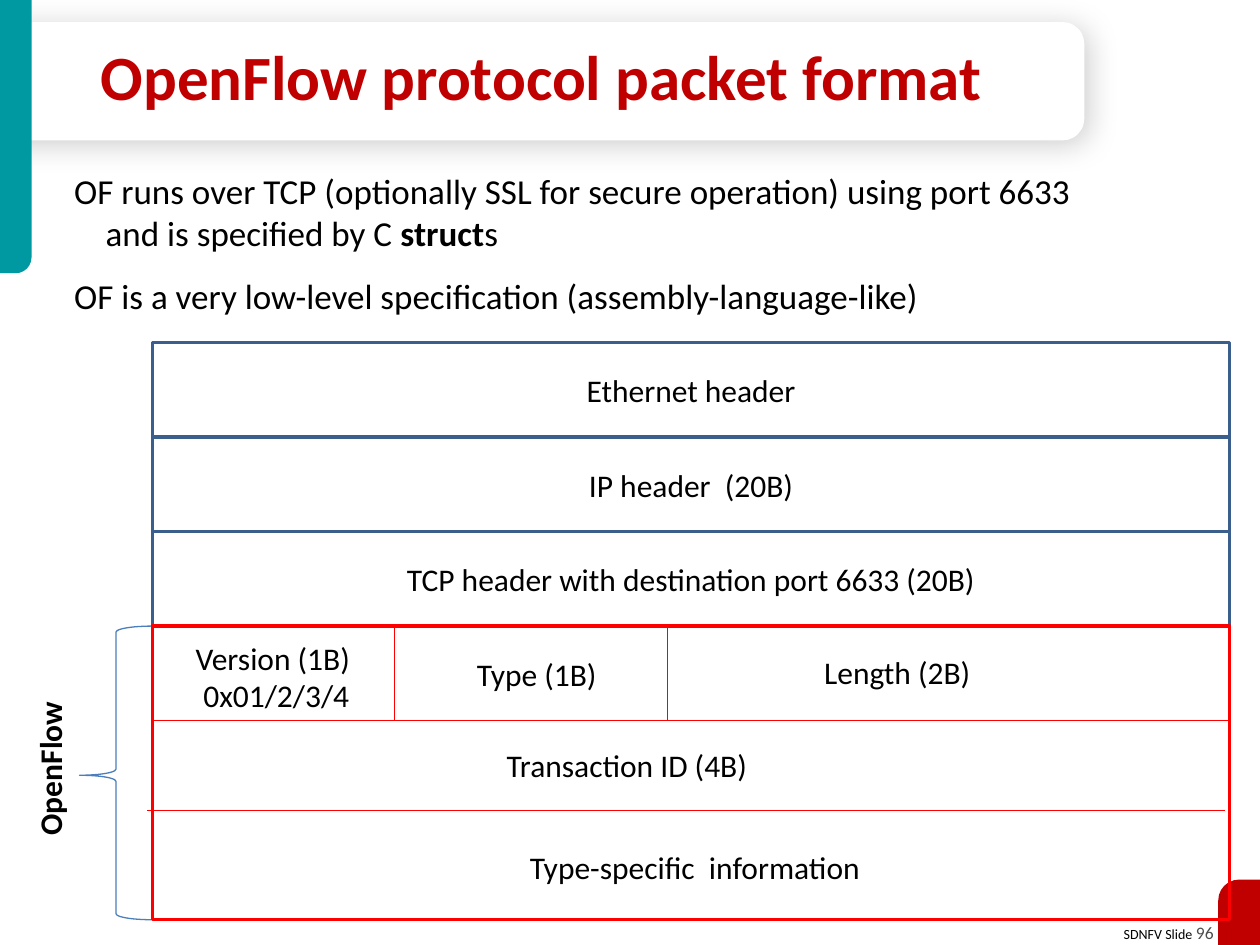
"""Build the slide on the OpenFlow protocol packet format."""
from lxml.etree import SubElement
from pptx import Presentation
from pptx.dml.color import RGBColor
from pptx.enum.shapes import MSO_CONNECTOR, MSO_SHAPE as SHAPE
from pptx.enum.text import MSO_ANCHOR as ANCHOR, PP_ALIGN as ALIGN
from pptx.oxml.ns import qn
from pptx.util import Pt

BLACK, GREY, RED, TEAL = "000000", "4D4D4D", "C00000", "0098A1"
WHITE, NAVY, BLUE, BRIGHT_RED = "FFFFFF", "3A5F8C", "4B7EBC", "FF0000"

TITLE = "OpenFlow protocol packet format"
INTRO = [
    (-18, 0, [("OF runs over TCP (optionally SSL for secure operation) using port 6633", False)]),
    (0, 0, [("and is specified by C ", False), ("struct", True), ("s", False)]),
    (-18, 12, [("OF is a very low-level specification (assembly-language-like)", False)]),
]
HEADERS = ["Ethernet header", "IP header  (20B)", "TCP header with destination port 6633 (20B)"]
FIELDS = [
    (["Version (1B)", " 0x01/2/3/4"], (90, 361.4, 131.8, 51.1)),
    (["Type (1B)"], (265, 370.8, 83.5, 28.8)),
    (["Length (2B)"], (463, 369.4, 99.4, 28.8)),
    (["Transaction ID (4B)"], (281.5, 422.6, 153.4, 28.8)),
    (["Type-specific  information"], (294.5, 481, 205.2, 28.8)),
]
FOOTER = [("SDNFV Slide ", 8, BLACK), ("96", 10, GREY)]

LEFT, TOP, WIDTH, ROW = 87.1, 195.8, 615.6, 54
BODY_TOP, BODY_HEIGHT = TOP + len(HEADERS) * ROW, 167.8
FIELD_BOTTOM = BODY_TOP + ROW
DIVIDERS = [
    (225.4, BODY_TOP, 225.4, FIELD_BOTTOM),
    (381.6, BODY_TOP, 381.6, FIELD_BOTTOM),
    (LEFT, FIELD_BOTTOM, LEFT + WIDTH, FIELD_BOTTOM),
    (84.2, 463, 84.2 + WIDTH, 463),
]


def color(value):
    return RGBColor.from_string(value)


def style(font, size, ink=BLACK, bold=False):
    font.name, font.size, font.bold = "Calibri", Pt(size), bold
    font.color.rgb = color(ink)


def add_block(page, kind, place, fill=None, line=None, width=2, adjust=(), flip=None):
    block = page.shapes.add_shape(kind, *map(Pt, place))
    block.shadow.inherit = False
    for index, value in enumerate(adjust):
        block.adjustments[index] = value
    if fill:
        block.fill.solid()
        block.fill.fore_color.rgb = color(fill)
    else:
        block.fill.background()
    if line:
        block.line.color.rgb = color(line)
        block.line.width = Pt(width)
    else:
        block.line.fill.background()
    if flip:
        block.element.spPr.get_or_add_xfrm().set(flip, "1")
    return block


def add_shadow(block):
    effects = block.element.spPr.find(qn("a:effectLst"))
    shadow = SubElement(effects, qn("a:outerShdw"), blurRad=str(Pt(17)), dist=str(Pt(3)),
                        dir="2700000", algn="tl", rotWithShape="0")
    ink = SubElement(shadow, qn("a:srgbClr"), val=BLACK)
    SubElement(ink, qn("a:alpha"), val="19000")


def write(shape, lines, size=18, bold=False, wrap=False):
    frame = shape.text_frame
    frame.text = "\n".join(lines)
    frame.word_wrap = wrap
    for para in frame.paragraphs:
        para.alignment = ALIGN.CENTER
        style(para.runs[0].font, size, bold=bold)


def add_label(page, lines, place, bold=False):
    box = page.shapes.add_textbox(*map(Pt, place))
    write(box, lines, bold=bold, wrap=len(lines) > 1)
    return box


def add_line(page, ends):
    line = page.shapes.add_connector(MSO_CONNECTOR.STRAIGHT, *map(Pt, ends))
    line.line.color.rgb = color(BRIGHT_RED)
    line.line.width = Pt(0.75)
    SubElement(line.element.spPr, qn("a:effectLst"))


def add_frame(page):
    footer = page.shapes.add_textbox(*map(Pt, (632.9, 523.4, 67.7, 19.4)))
    footer.text_frame.word_wrap = False
    para = footer.text_frame.paragraphs[0]
    para.alignment = ALIGN.RIGHT
    for text, size, ink in FOOTER:
        span = para.add_run()
        span.text = text
        style(span.font, size, ink)
    banner = add_block(page, SHAPE.ROUND_2_SAME_RECTANGLE, (275.8, -263.5, 67.7, 619.9),
                       WHITE, adjust=(0.184, 0))
    banner.rotation = 90
    add_shadow(banner)
    add_block(page, SHAPE.ROUND_1_RECTANGLE, (0, 0, 18, 156.2), TEAL,
              adjust=(0.5,), flip="flipV")
    add_block(page, SHAPE.ROUND_1_RECTANGLE, (696.2, 502.6, 23.8, 37.4), RED,
              adjust=(0.5,), flip="flipH")


def add_title(page):
    title = page.shapes.title
    title.left, title.top, title.width, title.height = map(Pt, (50.4, 20.9, 532.8, 51.1))
    title.text_frame.text = TITLE
    title.text_frame.vertical_anchor = ANCHOR.MIDDLE
    para = title.text_frame.paragraphs[0]
    para.alignment, para.line_spacing = ALIGN.LEFT, 0.85
    style(para.runs[0].font, 36, RED, True)
    title.element.getparent().append(title.element)


def add_packet(page):
    label = add_label(page, ["OpenFlow"], (-17.3, 424.8, 91.4, 28.8), bold=True)
    label.rotation = 270
    add_block(page, SHAPE.LEFT_BRACE, (45.4, BODY_TOP, LEFT - 45.4, BODY_HEIGHT),
              line=BLUE, width=0.75, adjust=(0.083, 0.508))
    for index, text in enumerate(HEADERS):
        row = add_block(page, SHAPE.RECTANGLE, (LEFT, TOP + index * ROW, WIDTH, ROW), line=NAVY)
        row.text_frame.vertical_anchor = ANCHOR.MIDDLE
        write(row, [text], wrap=True)
    add_block(page, SHAPE.RECTANGLE, (LEFT, BODY_TOP, WIDTH, BODY_HEIGHT), line=BRIGHT_RED)
    for ends in DIVIDERS:
        add_line(page, ends)
    for lines, place in FIELDS:
        add_label(page, lines, place)


def add_intro(page):
    box = page.shapes.add_textbox(*map(Pt, (35.3, 93.6, 617.8, 97.9)))
    frame = box.text_frame
    frame.word_wrap = True
    for index, (indent, before, spans) in enumerate(INTRO):
        para = frame.add_paragraph() if index else frame.paragraphs[0]
        margins = para._p.get_or_add_pPr()
        margins.set("marL", str(Pt(18)))
        margins.set("indent", str(Pt(indent)))
        if before:
            para.space_before = Pt(before)
        for text, bold in spans:
            span = para.add_run()
            span.text = text
            style(span.font, 20, bold=bold)


def main():
    deck = Presentation()
    deck.slide_width, deck.slide_height = Pt(720), Pt(540)
    page = deck.slides.add_slide(deck.slide_layouts[5])
    add_frame(page)
    add_title(page)
    add_packet(page)
    add_intro(page)
    deck.save("out.pptx")


if __name__ == "__main__":
    main()
